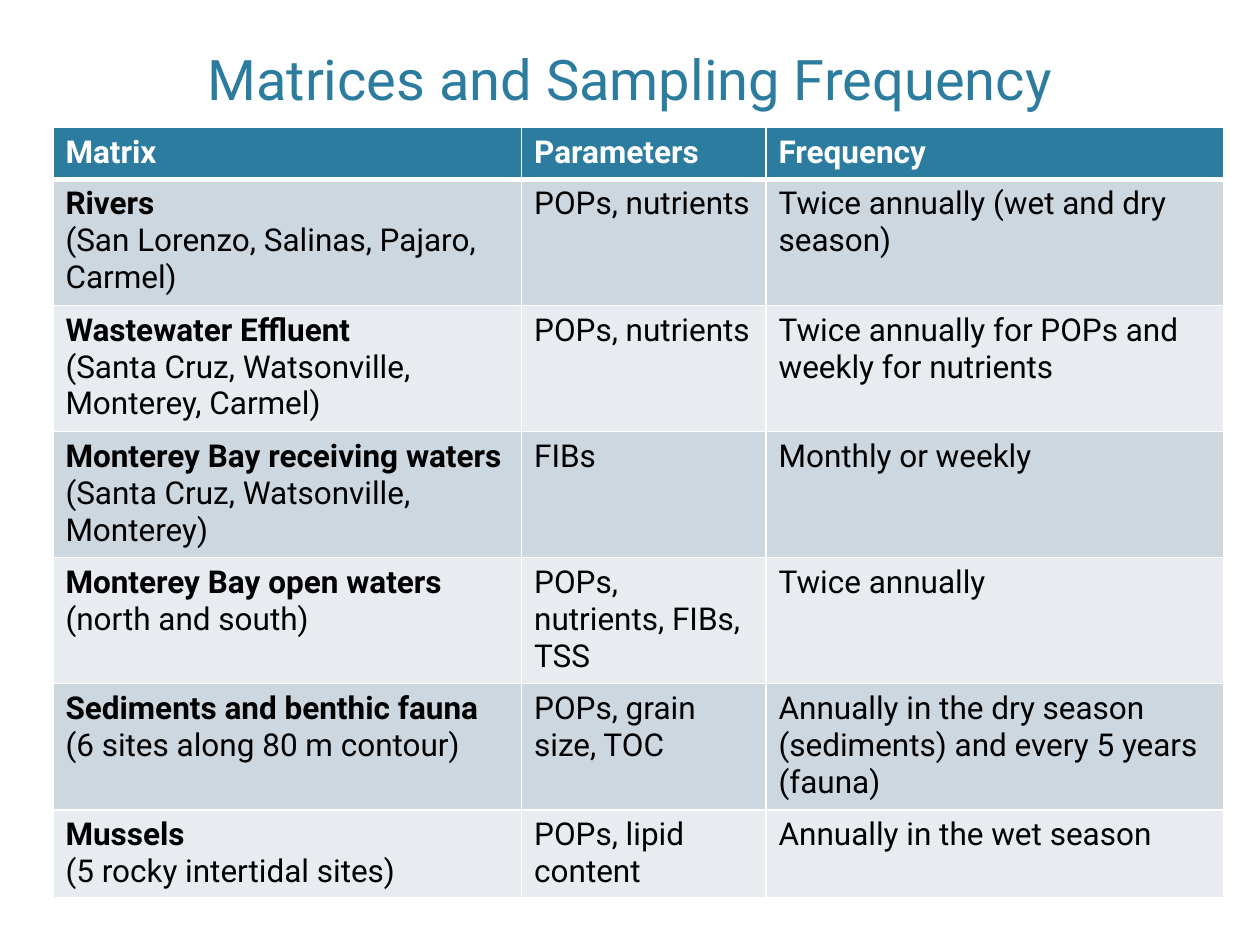
"""Build the slide on sampled matrices and their sampling frequency."""
from dataclasses import dataclass

import pptx
import pptx.dml.color
import pptx.enum.text
import pptx.oxml
import pptx.oxml.ns
import pptx.util


@dataclass(frozen=True)
class Theme:
    """Colours, font and type sizes."""
    accent: str = "2C7C9F"
    ink: str = "000000"
    paper: str = "FFFFFF"
    bands: tuple = ("CDD7DF", "E8ECF0")
    font: str = "Roboto"
    title_size: int = 32
    body_size: int = 18


class SlideBuilder:
    """Place styled elements on a slide by shares of its size."""

    def __init__(self, deck, theme):
        """Add a blank slide to the deck."""
        self.deck, self.theme = deck, theme
        self.slide = deck.slides.add_slide(deck.slide_layouts[6])

    def across(self, share):
        """Return a share of the slide's width."""
        return pptx.util.Emu(round(self.deck.slide_width * share))

    def down(self, share):
        """Return a share of the slide's height."""
        return pptx.util.Emu(round(self.deck.slide_height * share))

    def place(self, left, top, width, height):
        """Turn four shares into a position and size."""
        return self.across(left), self.down(top), self.across(width), self.down(height)

    def add_text(self, paragraph, text, size, color, bold=False):
        """Add one styled run to a paragraph."""
        run = paragraph.add_run()
        run.text = text
        style = {"name": self.theme.font, "size": pptx.util.Pt(size), "bold": bold}
        for attribute, value in style.items():
            setattr(run.font, attribute, value)
        run.font.color.rgb = pptx.dml.color.RGBColor.from_string(color)

    def title(self, text, area):
        """Add the centred heading."""
        frame = self.slide.shapes.add_textbox(*self.place(*area)).text_frame
        layout = {"word_wrap": True, "vertical_anchor": pptx.enum.text.MSO_ANCHOR.BOTTOM}
        for attribute, value in layout.items():
            setattr(frame, attribute, value)
        heading = frame.paragraphs[0]
        heading.alignment = pptx.enum.text.PP_ALIGN.CENTER
        self.add_text(heading, text, self.theme.title_size, self.theme.accent)

    def borders(self, cell, widths):
        """Rule the cell's sides in the paper colour."""
        properties = cell._tc.get_or_add_tcPr()
        for position, (side, points) in enumerate(widths.items()):
            line = pptx.oxml.parse_xml(
                f'<a:{side} {pptx.oxml.ns.nsdecls("a")} w="{pptx.util.Pt(points)}">'
                f'<a:solidFill><a:srgbClr val="{self.theme.paper}"/></a:solidFill></a:{side}>')
            properties.insert(position, line)

    def cell(self, cell, lines, fill, color, bold_first, widths):
        """Fill one table cell with its lines of text."""
        cell.fill.solid()
        cell.fill.fore_color.rgb = pptx.dml.color.RGBColor.from_string(fill)
        self.borders(cell, widths)
        for index, text in enumerate(lines):
            frame = cell.text_frame
            paragraph = frame.add_paragraph() if index else frame.paragraphs[0]
            self.add_text(paragraph, text, self.theme.body_size, color,
                          bold_first and index == 0)

    def table(self, header, records, corner, columns, row_share):
        """Add a banded table whose rows grow with their text."""
        area = (*corner, sum(columns), row_share * (len(records) + 1))
        grid = self.slide.shapes.add_table(
            len(records) + 1, len(columns), *self.place(*area)).table
        for column, share in zip(grid.columns, columns):
            column.width = self.across(share)
        for r, record in enumerate([header, *records]):
            is_header = r == 0
            fill = self.theme.accent if is_header else self.theme.bands[(r - 1) % 2]
            color = self.theme.paper if is_header else self.theme.ink
            widths = {"lnL": 1, "lnR": 1, "lnT": 3 if r == 1 else 1, "lnB": 3 if is_header else 1}
            for c, text in enumerate(record):
                self.cell(grid.cell(r, c), text.split("\n"), fill, color,
                          is_header or c == 0, widths)


HEADER = ("Matrix", "Parameters", "Frequency")
SAMPLING = [
    ("Rivers\n(San Lorenzo, Salinas, Pajaro, Carmel)", "POPs, nutrients",
     "Twice annually (wet and dry season)"),
    ("Wastewater Effluent\n(Santa Cruz, Watsonville, Monterey, Carmel)", "POPs, nutrients",
     "Twice annually for POPs and weekly for nutrients"),
    ("Monterey Bay receiving waters\n(Santa Cruz, Watsonville, Monterey)", "FIBs",
     "Monthly or weekly"),
    ("Monterey Bay open waters\n(north and south)", "POPs, nutrients, FIBs, TSS",
     "Twice annually"),
    ("Sediments and benthic fauna\n(6 sites along 80 m contour)", "POPs, grain size, TOC",
     "Annually in the dry season (sediments) and every 5 years (fauna)"),
    ("Mussels\n(5 rocky intertidal sites)", "POPs, lipid content",
     "Annually in the wet season"),
]


def main():
    """Build and save the deck."""
    deck = pptx.Presentation()
    deck.slide_width, deck.slide_height = pptx.util.Inches(10), pptx.util.Inches(7.5)
    builder = SlideBuilder(deck, Theme())
    builder.title("Matrices and Sampling Frequency", (0.06, 0.005, 0.88, 0.12))
    builder.table(HEADER, SAMPLING, corner=(0.042, 0.135),
                  columns=(0.372, 0.194, 0.363), row_share=0.055)
    deck.save("out.pptx")


if __name__ == "__main__":
    main()
